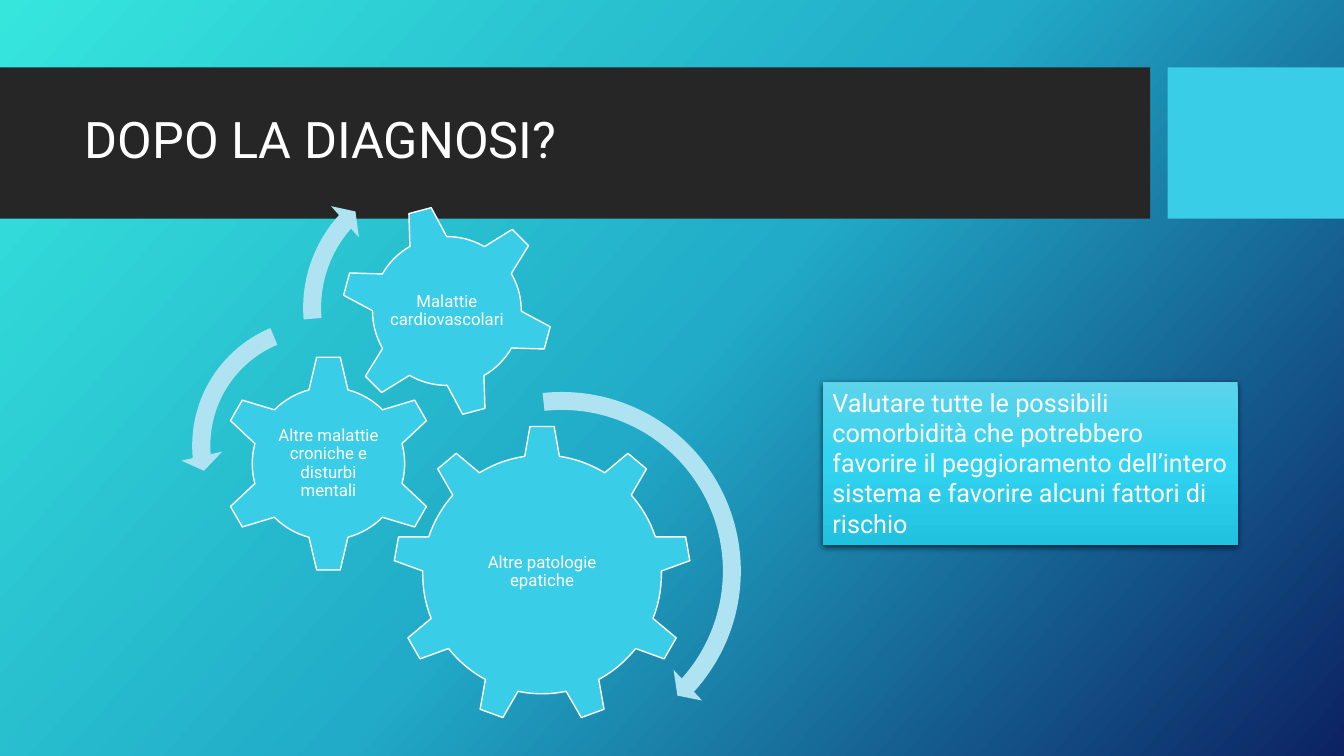
from copy import deepcopy

from lxml import etree
from pptx import Presentation
from pptx.dml.color import RGBColor
from pptx.enum.shapes import MSO_SHAPE
from pptx.enum.text import MSO_ANCHOR, MSO_AUTO_SIZE, PP_ALIGN
from pptx.oxml.ns import qn
from pptx.util import Pt

RECTANGLE = MSO_SHAPE.RECTANGLE
GEAR_SIX, GEAR_NINE = MSO_SHAPE.GEAR_6, MSO_SHAPE.GEAR_9
CLOCKWISE, COUNTERCLOCKWISE = MSO_SHAPE.CIRCULAR_ARROW, MSO_SHAPE.LEFT_CIRCULAR_ARROW
MIDDLE, TOP = MSO_ANCHOR.MIDDLE, MSO_ANCHOR.TOP
LEFT, CENTER = PP_ALIGN.LEFT, PP_ALIGN.CENTER
GROW, FIXED = MSO_AUTO_SIZE.SHAPE_TO_FIT_TEXT, MSO_AUTO_SIZE.NONE

WHITE = RGBColor(0xFF, 0xFF, 0xFF)
CHARCOAL = RGBColor(0x26, 0x26, 0x26)
CYAN = RGBColor(0x39, 0xCD, 0xE7)
PALE_CYAN = RGBColor(0xAF, 0xE3, 0xF1)
BACKDROP = [RGBColor(0x36, 0xE6, 0xDD), RGBColor(0x21, 0xAB, 0xC8), RGBColor(0x0C, 0x22, 0x63)]
CARD = [RGBColor(0x5D, 0xD3, 0xEB), RGBColor(0x30, 0xD3, 0xF0), RGBColor(0x21, 0xC2, 0xDF)]

TITLE_FRAME = {"vertical_anchor": MIDDLE, "word_wrap": True, "auto_size": FIXED}
LABEL_FRAME = TITLE_FRAME | dict.fromkeys(
    ["margin_left", "margin_right", "margin_top", "margin_bottom"], Pt(1.5))
CARD_FRAME = {"vertical_anchor": TOP, "word_wrap": True, "auto_size": GROW}
TITLE_PARAGRAPH = {"alignment": LEFT, "line_spacing": 0.9}
LABEL_PARAGRAPH = {"alignment": CENTER, "line_spacing": 0.9}
CARD_PARAGRAPH = {"alignment": LEFT}

GEARS = [
    (GEAR_NINE, (151.8, 190.8), 213.1, 0, "Altre patologie epatiche", (127.4, 109.4), -1.5),
    (GEAR_SIX, (28, 140.4), 155.5, 0,
     "Altre malattie croniche e disturbi mentali", (77, 76.3), 0),
    (GEAR_SIX, (114.4, 33.2), 151.9, 345, "Malattie cardiovascolari", (85.7, 85.7), 0),
]
ARROWS = [
    (CLOCKWISE, (136, 158.4), 272.9, (0.047, 2.99, 25.313, 158.291, 0.055)),
    (COUNTERCLOCKWISE, (0, 105.9), 198.7, (0.065, 4.3, 104.891, 148.378, 0.075)),
    (CLOCKWISE, (79.1, 0), 213.8, (0.06, 3.941, 133.138, 105.082, 0.07)),
]


def apply_format(target, values):
    """Set each named attribute of the target."""
    for name, value in values.items():
        setattr(target, name, value)


def write_text(holder, text, size, frame_format, paragraph_format):
    """Put one formatted paragraph into a shape."""
    frame = holder.text_frame
    apply_format(frame, frame_format)
    frame.text = text
    paragraph = frame.paragraphs[0]
    apply_format(paragraph, paragraph_format)
    apply_format(paragraph.font, {"name": "Roboto", "size": Pt(size), "bold": False})
    paragraph.font.color.rgb = WHITE


def fill_gradient(fill, owner, colours, clockwise_angle):
    """Give a fill evenly spaced gradient stops."""
    fill.gradient()
    fill.gradient_angle = 360 - clockwise_angle
    stop_list = owner.xpath(".//a:gsLst")[0]
    stop_list.append(deepcopy(stop_list[-1]))
    for index, (stop, colour) in enumerate(zip(fill.gradient_stops, colours)):
        stop.position = index / (len(colours) - 1)
        stop.color.rgb = colour


def add_flat_shape(shapes, kind, box, colour):
    """Add a borderless shape in one colour."""
    shape = shapes.add_shape(kind, *map(Pt, box))
    shape.shadow.inherit = False
    shape.fill.solid()
    shape.fill.fore_color.rgb = colour
    shape.line.fill.background()
    return shape


def add_banner(slide, box):
    """Draw the title band and its accent block."""
    left, top, width, height = box
    accent_width = 126
    band_width = width - accent_width - 12.4
    add_flat_shape(slide.shapes, RECTANGLE, (left, top, band_width, height), CHARCOAL)
    add_flat_shape(slide.shapes, RECTANGLE,
                   (left + width - accent_width, top, accent_width, height), CYAN)
    title = slide.shapes.title
    apply_format(title, {"left": Pt(left + 53.3), "top": Pt(top + 10.8),
                         "width": Pt(756.7), "height": Pt(85)})
    write_text(title, "DOPO LA DIAGNOSI?", 36, TITLE_FRAME, TITLE_PARAGRAPH)
    title.element.getparent().append(title.element)


def add_gears(slide, origin):
    """Draw the meshed gears, their labels and turning arrows."""
    left, top = origin
    shapes = slide.shapes.add_group_shape().shapes
    for kind, (x, y), size, rotation, text, (label_width, label_height), shift in GEARS:
        gear = add_flat_shape(shapes, kind, (left + x, top + y, size, size), CYAN)
        gear.rotation = rotation
        gear.line.color.rgb = WHITE
        gear.line.width = Pt(1)
        label = shapes.add_textbox(
            Pt(left + x + (size - label_width) / 2),
            Pt(top + y + (size - label_height) / 2 + shift),
            Pt(label_width), Pt(label_height))
        write_text(label, text, 12, LABEL_FRAME, LABEL_PARAGRAPH)
    for kind, (x, y), size, adjustments in ARROWS:
        arrow = add_flat_shape(shapes, kind, (left + x, top + y, size, size), PALE_CYAN)
        for index, value in enumerate(adjustments):
            arrow.adjustments[index] = value


def add_card(slide, box):
    """Draw the shaded advice card."""
    card = add_flat_shape(slide.shapes, RECTANGLE, box, CYAN)
    fill_gradient(card.fill, card.element, CARD, 90)
    effects = card.element.spPr.find(qn("a:effectLst"))
    shadow = etree.SubElement(effects, qn("a:outerShdw"), blurRad=str(Pt(4.5)),
                              dist=str(Pt(1.5)), dir="5400000", algn="ctr", rotWithShape="0")
    shade = etree.SubElement(shadow, qn("a:srgbClr"), val="000000")
    etree.SubElement(shade, qn("a:alpha"), val="63000")
    write_text(card, "Valutare tutte le possibili comorbidità che potrebbero favorire il "
               "peggioramento dell’intero sistema e favorire alcuni fattori di rischio",
               18, CARD_FRAME, CARD_PARAGRAPH)


def main():
    """Build and save the slide."""
    deck = Presentation()
    apply_format(deck, {"slide_width": Pt(960), "slide_height": Pt(540)})
    slide = deck.slides.add_slide(deck.slide_layouts.get_by_name("Title Only"))
    fill_gradient(slide.background.fill, slide.element, BACKDROP, 42)
    add_banner(slide, (0, 48.2, 960, 108))
    add_gears(slide, (128.9, 113))
    add_card(slide, (587.5, 272.9, 296.6, 116.6))
    deck.save("out.pptx")


if __name__ == "__main__":
    main()
